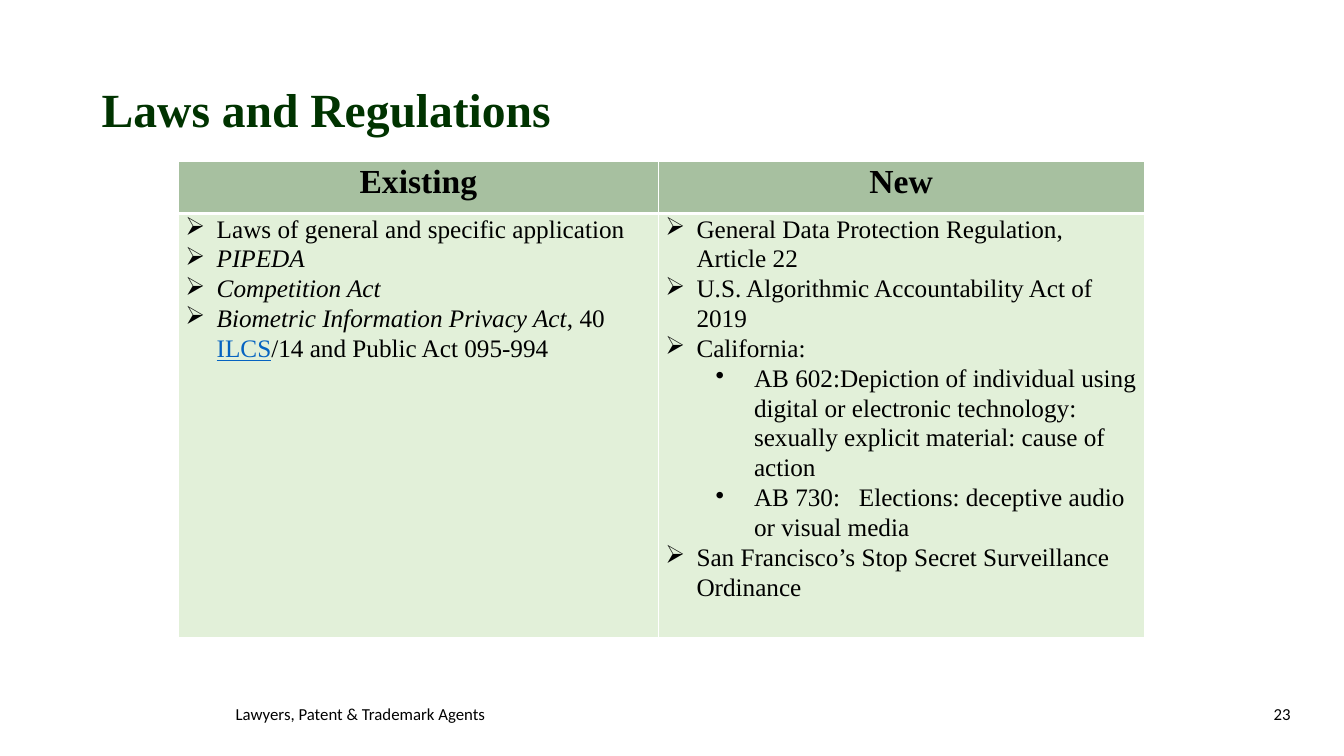
import lxml.etree
import pptx
import pptx.dml.color
import pptx.enum.text
import pptx.oxml.ns
import pptx.util

SLIDE_WIDTH = pptx.util.Inches(13.33)
SLIDE_HEIGHT = pptx.util.Inches(7.5)
SERIF = "Times New Roman"
SANS = "Calibri"
COLORS = {
    "title": "003300",
    "text": "000000",
    "link": "0563C1",
    "header": "A7C0A0",
    "body": "E2F0D9",
    "border": "FFFFFF",
}
ALIGN = pptx.enum.text.PP_ALIGN
ANCHOR = pptx.enum.text.MSO_ANCHOR

# Bullet character, left margin and hanging indent in inches, by level
BULLETS = [("➢", 0.31, 0.31), ("•", 0.88, 0.38)]
HEADERS = ["Existing", "New"]
ITALIC = {"italic": True}
LINK = {"color": "link", "underline": True}
# Each item is a level and its runs; each run is a text and its style
EXISTING_LAWS = [
    (0, [("Laws of general and specific application", {})]),
    (0, [("PIPEDA", ITALIC)]),
    (0, [("Competition Act", ITALIC)]),
    (0, [("Biometric Information Privacy Act", ITALIC), (", 40 ", {}),
         ("ILCS", LINK), ("/14 and Public Act 095-994", {})]),
]
NEW_LAWS = [
    (0, [("General Data Protection Regulation, Article 22", {})]),
    (0, [("U.S. Algorithmic Accountability Act of 2019", {})]),
    (0, [("California:", {})]),
    (1, [("AB 602:Depiction of individual using digital or electronic "
          "technology: sexually explicit material: cause of action", {})]),
    (1, [("AB 730:   Elections: deceptive audio or visual media", {})]),
    (0, [("San Francisco’s Stop Secret Surveillance Ordinance", {})]),
]


def across(percent):
    """Length as a percentage of the slide's width."""
    return round(SLIDE_WIDTH * percent / 100)


def down(percent):
    """Length as a percentage of the slide's height."""
    return round(SLIDE_HEIGHT * percent / 100)


def rgb(color):
    return pptx.dml.color.RGBColor.from_string(COLORS[color])


def add_run(paragraph, text, size, font=SERIF, color="text",
            bold=False, italic=False, underline=False):
    run = paragraph.add_run()
    run.text = text
    run.font.size = pptx.util.Pt(size)
    run.font.name = font
    run.font.color.rgb = rgb(color)
    run.font.bold = bold
    run.font.italic = italic
    run.font.underline = underline


def add_text(slide, left, top, width, height, text, size,
             align=ALIGN.LEFT, line_spacing=1.0, **style):
    box = slide.shapes.add_textbox(
        across(left), down(top), across(width), down(height))
    frame = box.text_frame
    frame.word_wrap = True
    frame.vertical_anchor = ANCHOR.MIDDLE
    paragraph = frame.paragraphs[0]
    paragraph.alignment = align
    paragraph.line_spacing = line_spacing
    add_run(paragraph, text, size, **style)


def set_bullet(paragraph, level):
    character, margin, hanging = BULLETS[level]
    paragraph.level = level
    properties = paragraph._p.get_or_add_pPr()
    properties.set("marL", str(pptx.util.Inches(margin)))
    properties.set("indent", str(-pptx.util.Inches(hanging)))
    bullet = lxml.etree.SubElement(properties, pptx.oxml.ns.qn("a:buChar"))
    bullet.set("char", character)


def set_borders(cell, widths):
    """Draw the left, right, top and bottom borders, widths in points."""
    properties = cell._tc.get_or_add_tcPr()
    for side, width in zip("LRTB", widths):
        line = lxml.etree.SubElement(
            properties, pptx.oxml.ns.qn(f"a:ln{side}"))
        line.set("w", str(pptx.util.Pt(width)))
        fill = lxml.etree.SubElement(line, pptx.oxml.ns.qn("a:solidFill"))
        color = lxml.etree.SubElement(fill, pptx.oxml.ns.qn("a:srgbClr"))
        color.set("val", COLORS["border"])


def style_cell(cell, fill, border_widths):
    cell.margin_left = cell.margin_right = pptx.util.Inches(0.07)
    cell.margin_top = cell.margin_bottom = 0
    set_borders(cell, border_widths)
    cell.fill.solid()
    cell.fill.fore_color.rgb = rgb(fill)


def fill_header(cell, text):
    style_cell(cell, "header", (1, 1, 1, 3))
    paragraph = cell.text_frame.paragraphs[0]
    paragraph.alignment = ALIGN.CENTER
    paragraph.line_spacing = 1.07
    add_run(paragraph, text, 24, bold=True)


def fill_list(cell, items):
    style_cell(cell, "body", (1, 1, 3, 1))
    frame = cell.text_frame
    for index, (level, runs) in enumerate(items):
        paragraph = frame.add_paragraph() if index else frame.paragraphs[0]
        paragraph.alignment = ALIGN.LEFT
        paragraph.line_spacing = 1.07
        set_bullet(paragraph, level)
        for text, style in runs:
            add_run(paragraph, text, 18, **style)


def add_law_table(slide, left, top, column_widths, row_heights):
    table = slide.shapes.add_table(
        len(row_heights), len(column_widths), across(left), down(top),
        across(sum(column_widths)), down(sum(row_heights))).table
    for column, width in zip(table.columns, column_widths):
        column.width = across(width)
    for row, height in zip(table.rows, row_heights):
        row.height = down(height)
    for index, header in enumerate(HEADERS):
        fill_header(table.cell(0, index), header)
    for index, laws in enumerate([EXISTING_LAWS, NEW_LAWS]):
        fill_list(table.cell(1, index), laws)


def main():
    presentation = pptx.Presentation()
    presentation.slide_width = SLIDE_WIDTH
    presentation.slide_height = SLIDE_HEIGHT
    slide = presentation.slides.add_slide(presentation.slide_layouts[6])
    add_text(slide, 16.8, 92.4, 25.2, 4,
             "Lawyers, Patent & Trademark Agents", 12, font=SANS)
    add_text(slide, 71.57, 92.4, 25.2, 4, "23", 12,
             align=ALIGN.RIGHT, font=SANS)
    add_text(slide, 6.83, 10.13, 83.12, 9.33, "Laws and Regulations", 34,
             line_spacing=0.9, color="title", bold=True)
    add_law_table(slide, 13.28, 21.33, (35.7, 36.15), (6.93, 56.13))
    presentation.save("out.pptx")


if __name__ == "__main__":
    main()
